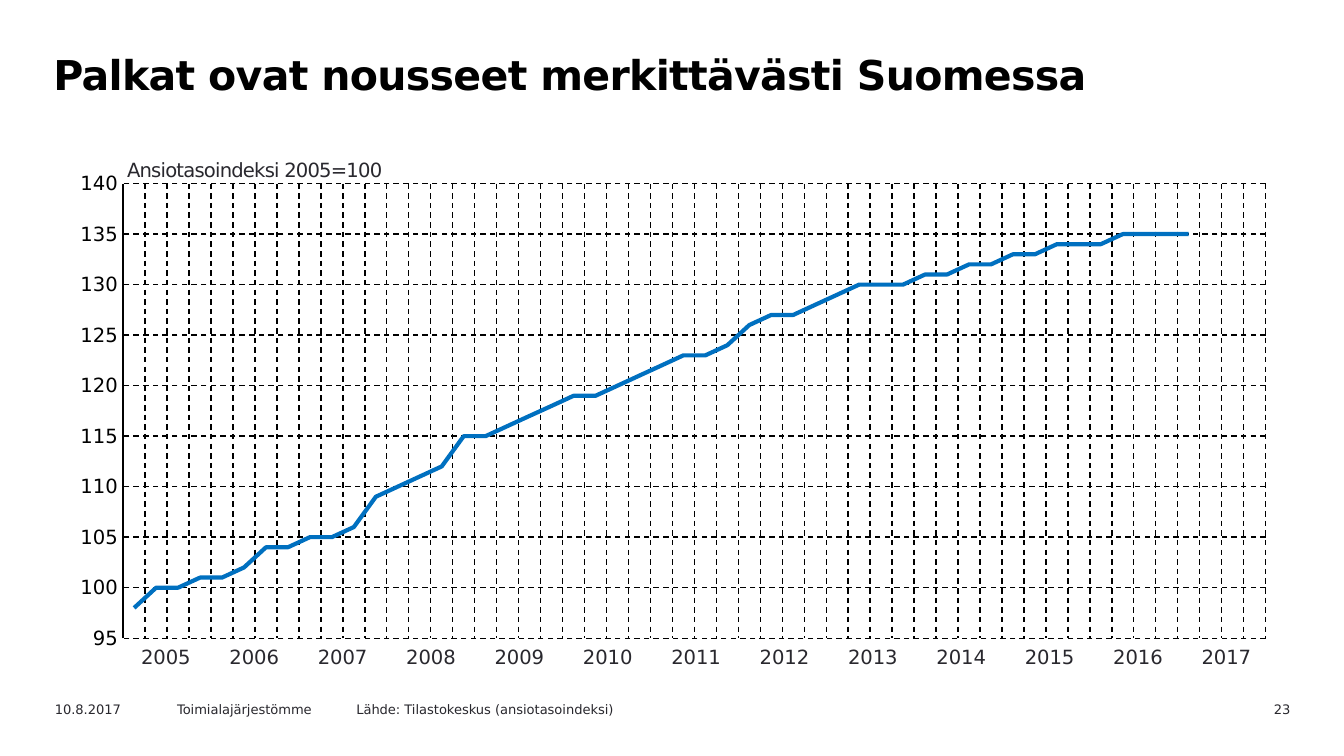
import pptx
import pptx.chart.data
import pptx.dml.color
import pptx.enum.chart
import pptx.enum.dml
import pptx.enum.text
import pptx.util
from lxml import etree

Pt = pptx.util.Pt
ALIGN = pptx.enum.text.PP_ALIGN
FONT = "DejaVu Sans"
COLORS = {"black": "000000", "text": "29282E", "line": "0070C0"}
NO_STYLE = "{2D5ABB26-0587-4C30-8999-92F81FD0307C}"

YEARS = range(2005, 2018)
# Quarterly earnings index; the last three quarters are not yet known
INDEX = [
    98, 100, 100, 101, 101, 102, 104, 104, 105, 105, 106, 109, 110,
    111, 112, 115, 115, 116, 117, 118, 119, 119, 120, 121, 122, 123,
    123, 124, 126, 127, 127, 128, 129, 130, 130, 130, 131, 131, 132,
    132, 133, 133, 134, 134, 134, 135, 135, 135, 135, None, None, None,
]


def rgb(name):
    return pptx.dml.color.RGBColor.from_string(COLORS[name])


def style_font(font, size, color, bold=False):
    font.name = FONT
    font.size = Pt(size)
    font.bold = bold
    font.color.rgb = rgb(color)


def style_line(line, color, width, dash=None):
    line.color.rgb = rgb(color)
    line.width = Pt(width)
    if dash:
        line.dash_style = dash


def add_text(slide, box, text, size, color="text", bold=False,
             align=ALIGN.LEFT, spacing=0, inset=None):
    tf = slide.shapes.add_textbox(*map(Pt, box)).text_frame
    tf.word_wrap = True
    if inset is not None:
        tf.margin_left = tf.margin_right = Pt(inset)
        tf.margin_top = tf.margin_bottom = Pt(inset)
    p = tf.paragraphs[0]
    p.text = text
    p.alignment = align
    r = p.runs[0]
    style_font(r.font, size, color, bold)
    if spacing:
        r._r.get_or_add_rPr().set("spc", str(round(spacing * 100)))
    return p


def add_title(slide, box):
    p = add_text(slide, box, "Palkat ovat nousseet merkittävästi Suomessa",
                 22, "black", bold=True, spacing=-0.35)
    p.line_spacing = Pt(27)
    p._p.get_or_add_pPr().set("marL", str(Pt(1.5)))


def set_plot_area(chart, x, y, w, h):
    """Fix the inner plot area as fractions of the chart."""
    plot_area = chart._chartSpace.chart.plotArea
    ns = plot_area.nsmap["c"]
    for old in plot_area.findall(f"{{{ns}}}layout"):
        plot_area.remove(old)
    layout = etree.Element(f"{{{ns}}}layout")
    manual = etree.SubElement(layout, f"{{{ns}}}manualLayout")
    values = {"layoutTarget": "inner", "xMode": "edge", "yMode": "edge",
              "x": x, "y": y, "w": w, "h": h}
    for tag, value in values.items():
        etree.SubElement(manual, f"{{{ns}}}{tag}").set("val", str(value))
    plot_area.insert(0, layout)


def add_index_chart(slide, box):
    data = pptx.chart.data.CategoryChartData()
    data.categories = [str(n) for n in range(1, len(INDEX) + 1)]
    data.add_series("Ansiotasoindeksi", INDEX)
    chart = slide.shapes.add_chart(
        pptx.enum.chart.XL_CHART_TYPE.LINE, *map(Pt, box), data).chart
    chart.has_legend = False
    chart.has_title = False
    style_font(chart.font, 10.5, "black")
    set_plot_area(chart, 0.054, 0.042, 0.926, 0.914)

    # Dashed grid on both axes
    for axis in (chart.category_axis, chart.value_axis):
        axis.has_major_gridlines = True
        style_line(axis.major_gridlines.format.line, "black", 0.75,
                   pptx.enum.dml.MSO_LINE.DASH)
        axis.major_tick_mark = pptx.enum.chart.XL_TICK_MARK.NONE
    chart.category_axis.visible = False

    axis = chart.value_axis
    axis.minimum_scale, axis.maximum_scale, axis.major_unit = 95, 140, 5
    style_line(axis.format.line, "black", 0.75)
    style_font(axis.tick_labels.font, 10.5, "black")

    plot = chart.plots[0]
    plot.vary_by_categories = False
    series = plot.series[0]
    series.smooth = False
    series.marker.style = pptx.enum.chart.XL_MARKER_STYLE.NONE
    style_line(series.format.line, "line", 2.25)


def add_year_row(slide, box):
    table = slide.shapes.add_table(1, len(YEARS), *map(Pt, box)).table
    table.first_row = table.horz_banding = False
    table._tbl.tblPr[0].text = NO_STYLE
    for col, cell, year in zip(table.columns, table.iter_cells(), YEARS):
        col.width = Pt(box[2] / len(YEARS))
        cell.fill.background()
        p = cell.text_frame.paragraphs[0]
        p.text = str(year)
        p.alignment = ALIGN.CENTER
        style_font(p.runs[0].font, 10.5, "text")


def add_footer(slide, box):
    left, top, width, height = box
    parts = [
        (0, 72, "10.8.2017", ALIGN.LEFT),
        (65.5, 102, "Toimialajärjestömme", ALIGN.LEFT),
        (161.5, 301, "Lähde: Tilastokeskus (ansiotasoindeksi)", ALIGN.LEFT),
        (width - 68, 68, "23", ALIGN.RIGHT),
    ]
    for x, w, text, align in parts:
        add_text(slide, (left + x, top, w, height), text, 7, align=align)


def main():
    prs = pptx.Presentation()
    prs.slide_width, prs.slide_height = Pt(720), Pt(405)
    slide = prs.slides.add_slide(prs.slide_layouts[6])
    add_title(slide, (20, 22.5, 629, 51))
    add_index_chart(slide, (30.3, 87.2, 661, 266.5))
    add_text(slide, (65.2, 81.5, 221, 18.5), "Ansiotasoindeksi 2005=100",
             10.5, spacing=-0.4, inset=2.9)
    add_year_row(slide, (65.2, 342.7, 615.6, 22.3))
    add_footer(slide, (22.3, 372.2, 676, 13))
    prs.save("out.pptx")


if __name__ == "__main__":
    main()
